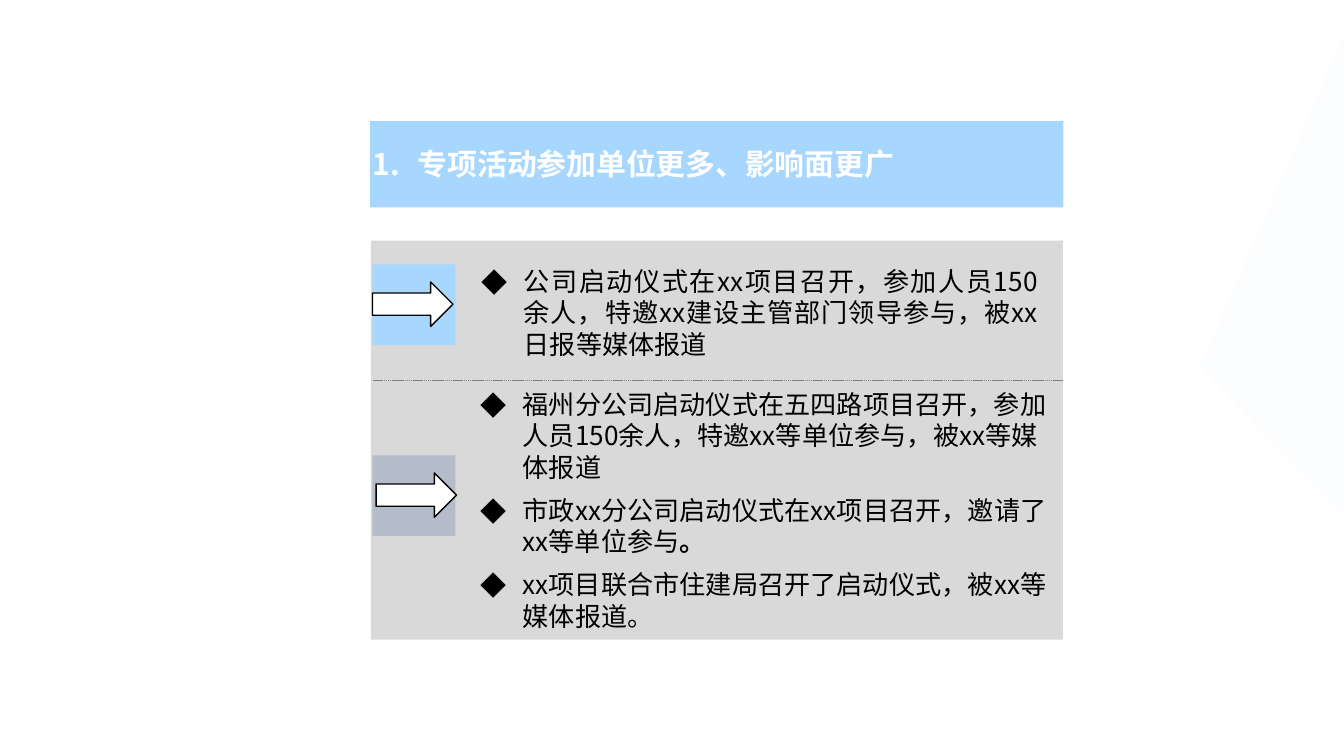
from dataclasses import dataclass

from lxml.etree import SubElement
from pptx import Presentation
from pptx.dml.color import RGBColor
from pptx.enum.dml import MSO_LINE
from pptx.enum.shapes import MSO_CONNECTOR, MSO_SHAPE
from pptx.enum.text import PP_ALIGN
from pptx.oxml.ns import qn
from pptx.util import Cm, Pt


@dataclass(frozen=True)
class Theme:
    font: str = "Noto Sans CJK SC"
    title_size: float = 16
    body_size: float = 14
    line_ratio: float = 1.21
    white: str = "FFFFFF"
    black: str = "000000"
    blue: str = "A7D6FF"
    slate: str = "B4BCCA"
    panel: str = "D9D9D9"
    rule: str = "808080"
    accent: str = "EAEFF6"


@dataclass(frozen=True)
class Box:
    """A region in centimetres."""
    left: float
    top: float
    width: float
    height: float

    def inner(self, dx, dy, width, height):
        return Box(self.left + dx, self.top + dy, width, height)

    def lengths(self):
        return Cm(self.left), Cm(self.top), Cm(self.width), Cm(self.height)


THEME = Theme()


def paint(shape, fill, line=None):
    shape.shadow.inherit = False
    shape.fill.solid()
    shape.fill.fore_color.rgb = RGBColor.from_string(fill)
    if line:
        shape.line.color.rgb = RGBColor.from_string(line)
        shape.line.width = Pt(0.75)
    else:
        shape.line.fill.background()


def add_block(page, kind, box, fill, line=None):
    shape = page.shapes.add_shape(kind, *box.lengths())
    paint(shape, fill, line)
    return shape


def add_text_frame(page, box):
    frame = page.shapes.add_textbox(*box.lengths()).text_frame
    frame.word_wrap = True
    return frame


def add_span(para, text, size, color, bold=False):
    span = para.add_run()
    span.text = text
    span.font.name = THEME.font
    span.font.size = Pt(size)
    span.font.bold = bold
    span.font.color.rgb = RGBColor.from_string(color)
    SubElement(span.font._element, qn("a:ea"), typeface=THEME.font)
    para.line_spacing = Pt(size * THEME.line_ratio)


def set_hanging(para, indent):
    properties = para._p.get_or_add_pPr()
    properties.set("marL", str(Cm(indent)))
    properties.set("indent", str(-Cm(indent)))
    return properties


def add_bullets(page, box, items, align=PP_ALIGN.LEFT):
    """Each item is a list of (text, bold) spans."""
    frame = add_text_frame(page, box)
    for index, spans in enumerate(items):
        para = frame.add_paragraph() if index else frame.paragraphs[0]
        para.alignment = align
        for text, bold in spans:
            add_span(para, text, THEME.body_size, THEME.black, bold)
        if index < len(items) - 1:
            para.space_after = Pt(6)
        properties = set_hanging(para, 0.79)
        SubElement(properties, qn("a:buFont"), typeface=THEME.font)
        SubElement(properties, qn("a:buChar"), char="◆")


def add_backdrop(page, box):
    right = box.left + box.width
    builder = page.shapes.build_freeform(Cm(right), Cm(box.top))
    builder.add_line_segments([
        (Cm(right), Cm(box.top + box.height)),
        (Cm(box.left), Cm(box.top + 6.27)),
    ], close=True)
    facet = builder.convert_to_shape()
    paint(facet, THEME.accent)
    color = facet._element.spPr.find(qn("a:solidFill"))[0]
    SubElement(color, qn("a:alpha"), val="10000")


def add_title(page, box):
    add_block(page, MSO_SHAPE.RECTANGLE, box, THEME.blue)
    frame = add_text_frame(page, box.inner(-0.2, 0.33, 12.04, 0.94))
    para = frame.paragraphs[0]
    set_hanging(para, 0.86)
    add_span(para, "1.\t专项活动参加单位更多、影响面更广",
             THEME.title_size, THEME.white, bold=True)


def add_marker(page, box, fill, arrow_shift):
    add_block(page, MSO_SHAPE.RECTANGLE, box, fill)
    add_block(page, MSO_SHAPE.RIGHT_ARROW,
              box.inner(arrow_shift, 0.33, 1.52, 0.84),
              THEME.white, THEME.black)


def add_divider(page, left, right, top):
    divider = page.shapes.add_connector(
        MSO_CONNECTOR.STRAIGHT, Cm(left), Cm(top), Cm(right), Cm(top))
    divider.line.color.rgb = RGBColor.from_string(THEME.rule)
    divider.line.width = Pt(0.25)
    divider.line.dash_style = MSO_LINE.SQUARE_DOT
    SubElement(divider._element.spPr, qn("a:effectLst"))


def add_details(page, box):
    add_block(page, MSO_SHAPE.RECTANGLE, box, THEME.panel)
    add_divider(page, box.left + 0.03, box.left + box.width, box.top + 2.64)

    # Arrow markers
    add_marker(page, box.inner(0.03, 0.45, 1.57, 1.52), THEME.blue, 0)
    add_marker(page, box.inner(0.03, 4.06, 1.57, 1.52), THEME.slate, 0.07)

    # Company event
    add_bullets(page, box.inner(1.85, 0.33, 11, 2.06), [
        [("公司启动仪式在xx项目召开，参加人员150余人，特邀xx建设主管部门领导参与，被xx日报等媒体报道", False)],
    ], PP_ALIGN.JUSTIFY)

    # Branch events
    add_bullets(page, box.inner(1.83, 2.66, 11.25, 4.88), [
        [("福州分公司启动仪式在五四路项目召开，参加人员150余人，特邀xx等单位参与，被xx等媒体报道", False)],
        [("市政xx分公司启动仪式在xx项目召开，邀请了xx等单位参与", False), ("。", True)],
        [("xx项目联合市住建局召开了启动仪式，被xx等媒体报道。", False)],
    ])


def main():
    deck = Presentation()
    deck.slide_width, deck.slide_height = Cm(25.4), Cm(14.29)
    page = deck.slides.add_slide(deck.slide_layouts[6])
    add_backdrop(page, Box(22.68, 0.66, 2.72, 9.12))
    add_details(page, Box(7.01, 4.55, 13.08, 7.54))
    add_title(page, Box(6.99, 2.29, 13.11, 1.63))
    deck.save("out.pptx")


if __name__ == "__main__":
    main()
